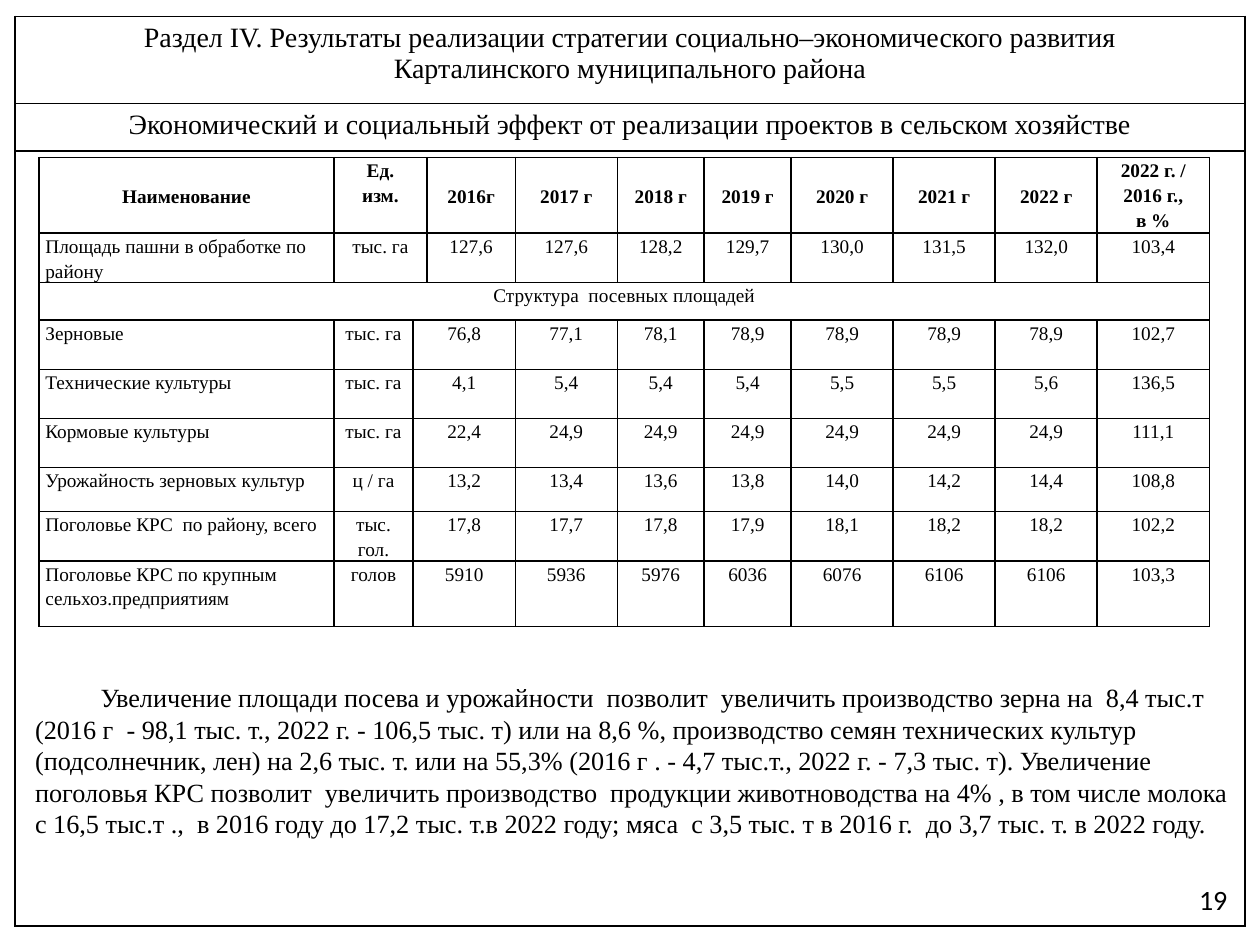
"""Build the slide on farm results: a framed page, a data table and a summary."""
import pptx
import pptx.util
import pptx.dml.color
import pptx.enum.text
import pptx.oxml
import pptx.oxml.ns
from pptx.util import Inches

INK = {"text": "000000", "line": "000000"}
SERIF = "Times New Roman"
ALIGN = pptx.enum.text.PP_ALIGN
ANCHOR = pptx.enum.text.MSO_ANCHOR

HEADS = [
    "Раздел IV. Результаты реализации стратегии социально–экономического развития\n"
    "Карталинского муниципального района",
    "Экономический и социальный эффект от реализации проектов в сельском хозяйстве",
    "",
]
TITLES = ["Наименование", "Ед.\nизм.", "2016г", "2017 г", "2018 г", "2019 г",
          "2020 г", "2021 г", "2022 г", "2022 г. / 2016 г.,\nв %"]
BAND = "Структура  посевных площадей"
ROWS = [
    ("Площадь пашни в обработке по району", "тыс. га",
     "127,6 127,6 128,2 129,7 130,0 131,5 132,0 103,4"),
    (BAND, "", ""),
    ("Зерновые", "тыс. га", "76,8 77,1 78,1 78,9 78,9 78,9 78,9 102,7"),
    ("Технические культуры", "тыс. га", "4,1 5,4 5,4 5,4 5,5 5,5 5,6 136,5"),
    ("Кормовые культуры", "тыс. га", "22,4 24,9 24,9 24,9 24,9 24,9 24,9 111,1"),
    ("Урожайность зерновых культур", "ц / га",
     "13,2 13,4 13,6 13,8 14,0 14,2 14,4 108,8"),
    ("Поголовье КРС  по району, всего", "тыс. гол.",
     "17,8 17,7 17,8 17,9 18,1 18,2 18,2 102,2"),
    ("Поголовье КРС по крупным сельхоз.предприятиям", "голов",
     "5910 5936 5976 6036 6076 6106 6106 103,3"),
]
WIDTHS = [2.34, 0.63, 0.11, 0.7, 0.81, 0.69, 0.69, 0.81, 0.81, 0.81, 0.89]
HEIGHTS = [0.6, 0.39, 0.3, 0.39, 0.39, 0.39, 0.35, 0.39, 0.52]
NOTE = (
    "Увеличение площади посева и урожайности  позволит  увеличить производство зерна "
    "на  8,4 тыс.т (2016 г  - 98,1 тыс. т., 2022 г. - 106,5 тыс. т) или на 8,6 %, "
    "производство семян технических культур (подсолнечник, лен) на 2,6 тыс. т. или на "
    "55,3% (2016 г . - 4,7 тыс.т., 2022 г. - 7,3 тыс. т). Увеличение поголовья КРС "
    "позволит  увеличить производство  продукции животноводства на 4% , в том числе "
    "молока  с 16,5 тыс.т .,  в 2016 году до 17,2 тыс. т.в 2022 году; мяса  с 3,5 тыс. т "
    "в 2016 г.  до 3,7 тыс. т. в 2022 году."
)


def style(frame, size, align, face=SERIF, bold=False, space=None):
    """Format every paragraph of a text frame."""
    for para in frame.paragraphs:
        para.alignment = align
        para.line_spacing = space
        font = para.font
        font.name, font.size, font.bold = face, pptx.util.Pt(size), bold
        font.color.rgb = pptx.dml.color.RGBColor.from_string(INK["text"])


def edge(cell):
    """Give a cell four thin lines and no fill."""
    props = cell._tc.get_or_add_tcPr()
    for side in "LRTB":
        props.append(pptx.oxml.parse_xml(
            f'<a:ln{side} {pptx.oxml.ns.nsdecls("a")} w="12700"><a:solidFill>'
            f'<a:srgbClr val="{INK["line"]}"/></a:solidFill></a:ln{side}>'))
    cell.fill.background()


def grid(slide, left, top, widths, heights):
    """Add a plain ruled table."""
    table = slide.shapes.add_table(
        len(heights), len(widths), Inches(left), Inches(top),
        Inches(sum(widths)), Inches(sum(heights))).table
    table.first_row = table.horz_banding = False
    for col, width in zip(table.columns, widths):
        col.width = Inches(width)
    for row, height in zip(table.rows, heights):
        row.height = Inches(height)
    for cell in table.iter_cells():
        edge(cell)
        style(cell.text_frame, 11, ALIGN.CENTER)
    return table


def page(slide):
    """Add the page frame with its two headings."""
    table = grid(slide, 0.12, 0.13, [9.76], [0.69, 0.38, 6.15])
    for cell, text in zip(table.iter_cells(), HEADS):
        cell.text = text
        style(cell.text_frame, 16, ALIGN.CENTER)


def put(cell, text, align, bold):
    """Write one cell of the data table."""
    cell.text = text
    cell.margin_left = cell.margin_right = Inches(0.05)
    cell.margin_top = cell.margin_bottom = 0
    style(cell.text_frame, 11, align, bold=bold, space=1.15)


def data(slide):
    """Add the table of farm figures by year."""
    table = grid(slide, 0.31, 1.25, WIDTHS, HEIGHTS)
    lines = [TITLES] + [[name, unit, *nums.split()] for name, unit, nums in ROWS]
    for r, line in enumerate(lines):
        if line[0] == BAND:
            table.cell(r, 0).merge(table.cell(r, len(WIDTHS) - 1))
            put(table.cell(r, 0), BAND, ALIGN.CENTER, False)
            continue
        wide = 1 if r < 2 else 2
        table.cell(r, wide).merge(table.cell(r, wide + 1))
        spots = [c for c in range(len(WIDTHS)) if c != wide + 1]
        for c, text in zip(spots, line):
            cell = table.cell(r, c)
            left = r > 0 and c == 0
            put(cell, text, ALIGN.LEFT if left else ALIGN.CENTER, r == 0)
            if r == 0 and "\n" not in text:
                cell.vertical_anchor = ANCHOR.MIDDLE


def label(slide, text, area, size, align, face=SERIF):
    """Add a wrapped text box and return its frame."""
    frame = slide.shapes.add_textbox(*map(Inches, area)).text_frame
    frame.word_wrap = True
    frame.text = text
    style(frame, size, align, face)
    return frame


def main():
    """Build and save the slide."""
    deck = pptx.Presentation()
    deck.slide_width, deck.slide_height = Inches(10), Inches(7.5)
    slide = deck.slides.add_slide(deck.slide_layouts[6])
    page(slide)
    data(slide)
    note = label(slide, NOTE, (0.18, 5.36, 9.74, 1.36), 15, ALIGN.LEFT)
    note.paragraphs[0]._p.get_or_add_pPr().set("indent", str(Inches(0.52)))
    number = label(slide, "19", (7.51, 6.94, 2.33, 0.4), 16, ALIGN.RIGHT, "Calibri")
    number.vertical_anchor = ANCHOR.MIDDLE
    deck.save("out.pptx")


if __name__ == "__main__":
    main()
